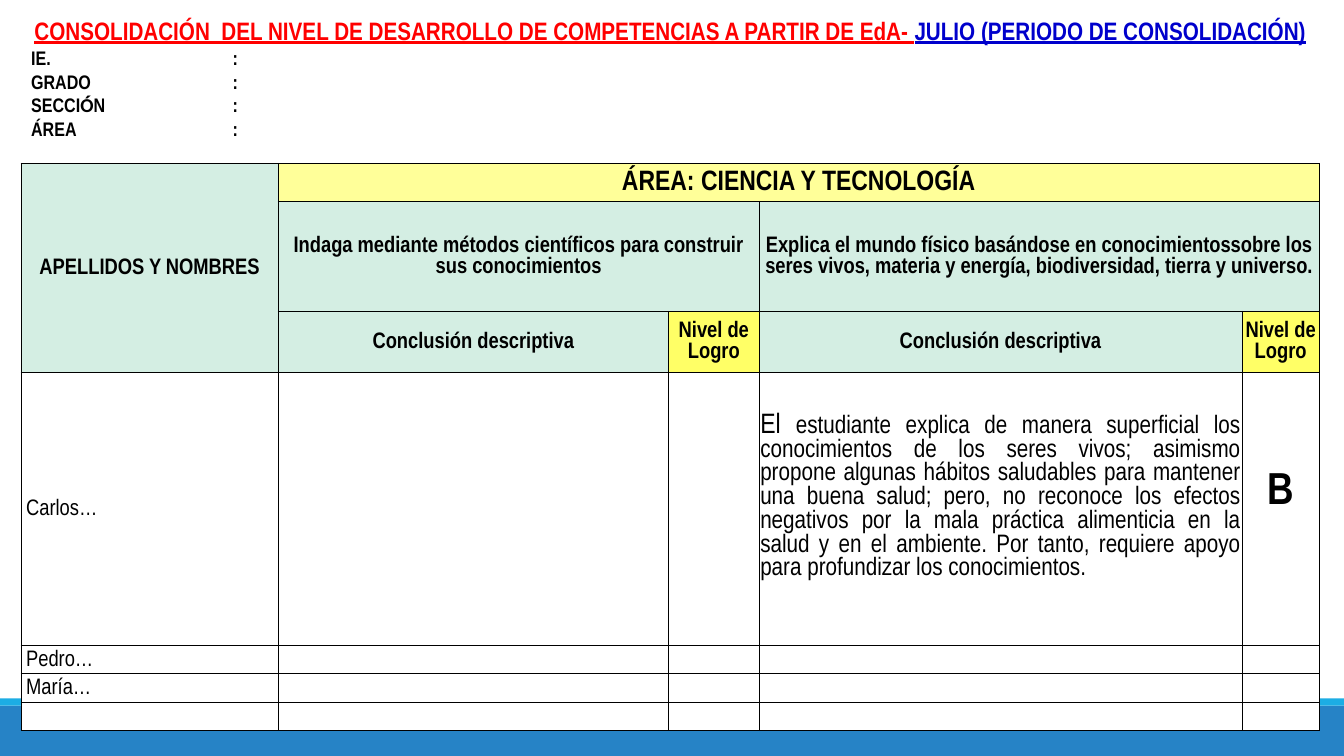
from dataclasses import dataclass

from lxml.etree import SubElement
from pptx import Presentation
from pptx.dml.color import RGBColor
from pptx.enum.shapes import MSO_SHAPE
from pptx.enum.text import MSO_ANCHOR, MSO_AUTO_SIZE, PP_ALIGN
from pptx.oxml.ns import qn
from pptx.util import Cm, Pt


@dataclass(frozen=True)
class Theme:
    font: str = "Arial Narrow"
    accent_font: str = "Calibri"
    black: str = "000000"
    white: str = "FFFFFF"
    red: str = "FF0000"
    navy: str = "0000CC"
    mint: str = "D4EEE3"
    light_yellow: str = "FFFF99"
    yellow: str = "FFFF66"
    footer_blue: str = "2683C6"
    footer_cyan: str = "1CADE4"
    field_size: int = 14
    cell_size: int = 16
    heading_size: int = 18
    area_size: int = 20
    level_size: int = 32


THEME = Theme()
COLUMN_WIDTHS = (6.48, 9.84, 2.28, 12.17, 1.95)
ROW_HEIGHTS = (0.96, 2.77, 1.55, 6.88, 0.69, 0.69, 0.69)
LEFT, WIDTH = Cm(0.53), Cm(32.72)
CONCLUSION = (
    "estudiante explica de manera superficial los conocimientos de los seres vivos; "
    "asimismo propone algunas hábitos saludables para mantener una buena salud; pero, "
    "no reconoce los efectos negativos por la mala práctica alimenticia en la salud y "
    "en el ambiente. Por tanto, requiere apoyo para profundizar los conocimientos."
)


def add_run(paragraph, text, size, color=THEME.black, bold=False, underline=False, font=THEME.font):
    run = paragraph.add_run()
    run.text = text
    run.font.name = font
    run.font.size = Pt(size)
    run.font.bold = bold
    run.font.underline = underline
    run.font.color.rgb = RGBColor.from_string(color)


def add_band(slide, top, width, height, color):
    band = slide.shapes.add_shape(MSO_SHAPE.RECTANGLE, 0, top, width, height)
    band.shadow.inherit = False
    band.fill.solid()
    band.fill.fore_color.rgb = RGBColor.from_string(color)
    band.line.fill.background()


def add_heading_paragraph(frame, alignment, first=False):
    paragraph = frame.paragraphs[0] if first else frame.add_paragraph()
    paragraph.alignment = alignment
    paragraph.line_spacing = 1.0
    paragraph.space_before = Pt(0)
    return paragraph


def add_tab_stop(paragraph, position):
    tabs = SubElement(paragraph._p.get_or_add_pPr(), qn("a:tabLst"))
    SubElement(tabs, qn("a:tab"), pos=str(position), algn="l")


def fill_heading(title):
    title.left, title.top, title.width, title.height = LEFT, Cm(0.25), WIDTH, Cm(3.43)
    title.fill.solid()
    title.fill.fore_color.rgb = RGBColor.from_string(THEME.white)
    frame = title.text_frame
    frame.word_wrap = True
    frame.auto_size = MSO_AUTO_SIZE.SHAPE_TO_FIT_TEXT
    frame.vertical_anchor = MSO_ANCHOR.MIDDLE
    heading = add_heading_paragraph(frame, PP_ALIGN.CENTER, first=True)
    for text, color in (
        ("CONSOLIDACIÓN  DEL NIVEL DE DESARROLLO DE COMPETENCIAS A PARTIR DE EdA- ", THEME.red),
        ("JULIO (PERIODO DE CONSOLIDACIÓN)", THEME.navy),
    ):
        add_run(heading, text, THEME.heading_size, color, bold=True, underline=True)
    for pieces in (("IE.",), ("GRADO",), ("SECCI", "Ó", "N"), ("ÁREA",)):
        field = add_heading_paragraph(frame, PP_ALIGN.LEFT)
        add_tab_stop(field, Cm(5.08))
        for piece in pieces:
            font = THEME.accent_font if piece == "Ó" else THEME.font
            add_run(field, piece, THEME.field_size, bold=True, font=font)
        add_run(field, "\t:", THEME.field_size, bold=True)


def add_borders(cell):
    properties = cell._tc.get_or_add_tcPr()
    for side in ("a:lnL", "a:lnR", "a:lnT", "a:lnB"):
        line = SubElement(properties, qn(side), w=str(Pt(0.5)))
        fill = SubElement(line, qn("a:solidFill"))
        SubElement(fill, qn("a:srgbClr"), val=THEME.black)


def prepare_cell(cell):
    cell.margin_left = cell.margin_right = cell.margin_top = Cm(0.03)
    cell.margin_bottom = 0
    cell.vertical_anchor = MSO_ANCHOR.MIDDLE
    add_borders(cell)
    cell.fill.solid()
    cell.fill.fore_color.rgb = RGBColor.from_string(THEME.white)
    paragraph = cell.text_frame.paragraphs[0]
    paragraph.line_spacing = 1.0
    SubElement(paragraph._p, qn("a:endParaRPr"), sz=str(THEME.cell_size * 100))


def write_cell(cell, text, alignment, size=THEME.cell_size, bold=False):
    paragraph = cell.text_frame.paragraphs[0]
    paragraph.alignment = alignment
    add_run(paragraph, text, size, bold=bold)


def write_header(table, row, column, text, color, row_span=1, column_span=1, size=THEME.cell_size):
    cell = table.cell(row, column)
    if row_span * column_span > 1:
        cell.merge(table.cell(row + row_span - 1, column + column_span - 1))
    cell.fill.fore_color.rgb = RGBColor.from_string(color)
    write_cell(cell, text, PP_ALIGN.CENTER, size, bold=True)


def add_competence_table(slide):
    table = slide.shapes.add_table(
        len(ROW_HEIGHTS), len(COLUMN_WIDTHS), LEFT, Cm(4.11), WIDTH, Cm(sum(ROW_HEIGHTS))
    ).table
    for column, width in zip(table.columns, COLUMN_WIDTHS):
        column.width = Cm(width)
    for row, height in zip(table.rows, ROW_HEIGHTS):
        row.height = Cm(height)
    for cell in table.iter_cells():
        prepare_cell(cell)

    write_header(table, 0, 0, "APELLIDOS Y NOMBRES", THEME.mint, row_span=3)
    write_header(table, 0, 1, "ÁREA: CIENCIA Y TECNOLOGÍA", THEME.light_yellow,
                 column_span=4, size=THEME.area_size)
    competences = (
        "Indaga mediante métodos científicos para construir sus conocimientos",
        "Explica el mundo físico basándose en conocimientossobre los seres vivos, "
        "materia y energía, biodiversidad, tierra y universo.",
    )
    for column, competence in zip((1, 3), competences):
        write_header(table, 1, column, competence, THEME.mint, column_span=2)
        write_header(table, 2, column, "Conclusión descriptiva", THEME.mint)
        write_header(table, 2, column + 1, "Nivel de Logro", THEME.yellow)

    for row, student in enumerate(("Carlos…", "Pedro…", "María…"), start=3):
        cell = table.cell(row, 0)
        cell.margin_left = Cm(0.13)
        write_cell(cell, student, PP_ALIGN.JUSTIFY)

    conclusion, level = table.cell(3, 3), table.cell(3, 4)
    write_cell(conclusion, "El ", PP_ALIGN.JUSTIFY, THEME.area_size)
    write_cell(conclusion, CONCLUSION, PP_ALIGN.JUSTIFY, THEME.heading_size)
    write_cell(level, "B", PP_ALIGN.CENTER, THEME.level_size, bold=True)
    conclusion.margin_bottom = Cm(0.65)
    level.margin_bottom = Cm(0.85)


def main():
    presentation = Presentation()
    presentation.slide_width, presentation.slide_height = Cm(33.87), Cm(19.05)
    slide = presentation.slides.add_slide(presentation.slide_layouts[5])
    add_band(slide, Cm(17.78), presentation.slide_width, Cm(1.27), THEME.footer_blue)
    add_band(slide, Cm(17.6), presentation.slide_width, Cm(0.18), THEME.footer_cyan)
    fill_heading(slide.shapes.title)
    add_competence_table(slide)
    presentation.save("out.pptx")


if __name__ == "__main__":
    main()
